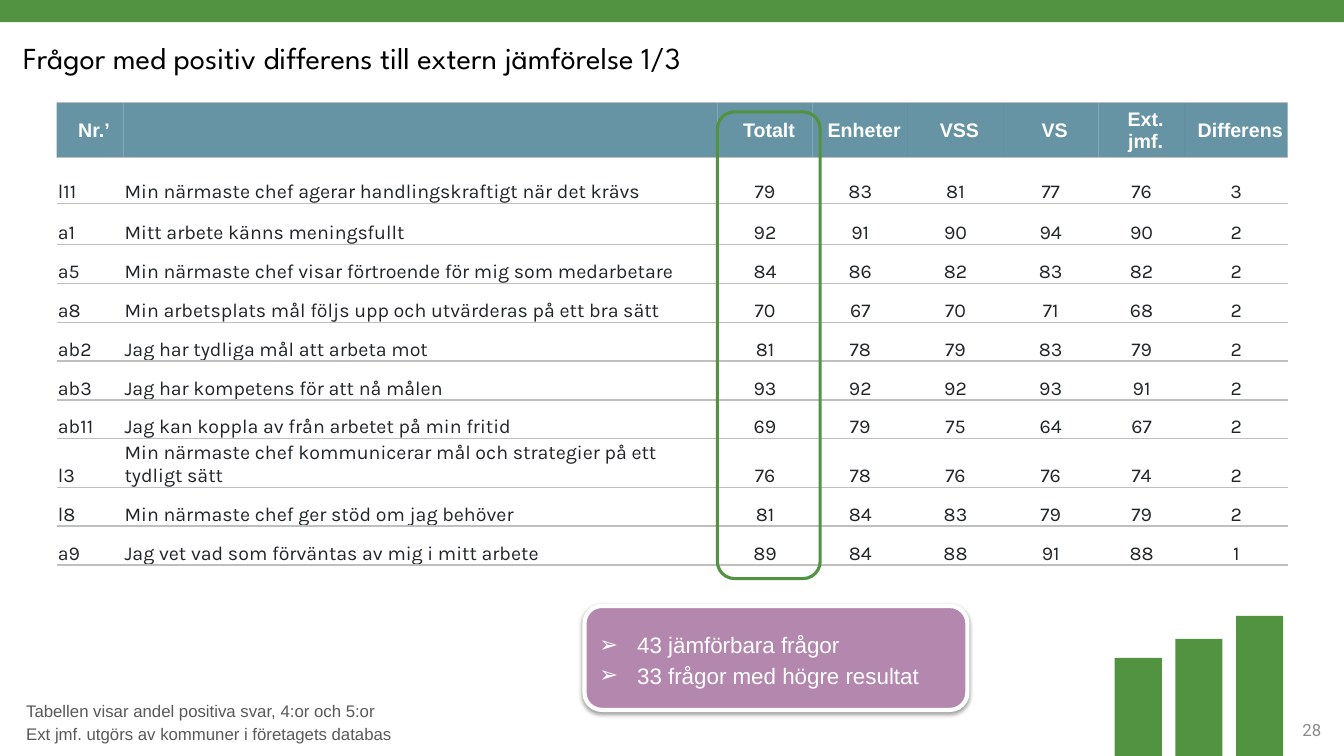
from typing import NamedTuple

from lxml import etree
from pptx import Presentation
from pptx.dml.color import RGBColor
from pptx.enum.shapes import MSO_SHAPE
from pptx.enum.text import MSO_ANCHOR, PP_ALIGN
from pptx.oxml.ns import qn
from pptx.util import Cm, Pt

RECT, ROUNDED = MSO_SHAPE.RECTANGLE, MSO_SHAPE.ROUNDED_RECTANGLE
LEFT, CENTER, RIGHT = PP_ALIGN.LEFT, PP_ALIGN.CENTER, PP_ALIGN.RIGHT
TOP, MIDDLE, BOTTOM = MSO_ANCHOR.TOP, MSO_ANCHOR.MIDDLE, MSO_ANCHOR.BOTTOM

GREEN = RGBColor(0x52, 0x93, 0x41)
TEAL = RGBColor(0x42, 0x7A, 0x8E)
PURPLE = RGBColor(0xB3, 0x87, 0xAE)
RULE = RGBColor(0xBF, 0xBF, 0xBF)
INK = RGBColor(0x21, 0x25, 0x29)
NOTE_GRAY = RGBColor(0x59, 0x59, 0x59)
PAGE_GRAY = RGBColor(0x8C, 0x8C, 0x8C)
BLACK = RGBColor(0, 0, 0)
WHITE = RGBColor(0xFF, 0xFF, 0xFF)

SLIDE_W, SLIDE_H = 33.87, 19.05


class Box(NamedTuple):
    """Left, top, width and height in centimetres."""
    x: float
    y: float
    w: float
    h: float

    def lengths(self) -> list:
        return [Cm(v) for v in self]


class Question(NamedTuple):
    number: str
    text: str
    scores: tuple  # Totalt, Enheter, VSS, VS, Ext. jmf., Differens


HEADERS = ("Nr.’", "", "Totalt", "Enheter", "VSS", "VS", "Ext. jmf.", "Differens")
QUESTIONS = [
    Question("l11", "Min närmaste chef agerar handlingskraftigt när det krävs", (79, 83, 81, 77, 76, 3)),
    Question("a1", "Mitt arbete känns meningsfullt", (92, 91, 90, 94, 90, 2)),
    Question("a5", "Min närmaste chef visar förtroende för mig som medarbetare", (84, 86, 82, 83, 82, 2)),
    Question("a8", "Min arbetsplats mål följs upp och utvärderas på ett bra sätt", (70, 67, 70, 71, 68, 2)),
    Question("ab2", "Jag har tydliga mål att arbeta mot", (81, 78, 79, 83, 79, 2)),
    Question("ab3", "Jag har kompetens för att nå målen", (93, 92, 92, 93, 91, 2)),
    Question("ab11", "Jag kan koppla av från arbetet på min fritid", (69, 79, 75, 64, 67, 2)),
    Question("l3", "Min närmaste chef kommunicerar mål och strategier på ett tydligt sätt",
             (76, 78, 76, 76, 74, 2)),
    Question("l8", "Min närmaste chef ger stöd om jag behöver", (81, 84, 83, 79, 79, 2)),
    Question("a9", "Jag vet vad som förväntas av mig i mitt arbete", (89, 84, 88, 91, 88, 1)),
]
COL_WIDTHS = [1.68, 14.97] + [2.4] * 4 + [2.18, 2.59]
ROW_HEIGHTS = [1.39, 1.16, 1.03] + [0.98] * 8


def write(tf, text: str, *, size: float, font: str, color: RGBColor, bold: bool = False,
          align=LEFT, anchor=TOP, spacing: float = 1.0, before: float = 0, bullet: str = "") -> None:
    """Fill a text frame, one paragraph per line of text."""
    tf.word_wrap = True
    tf.vertical_anchor = anchor
    for i, line in enumerate(text.split("\n")):
        p = tf.paragraphs[0] if i == 0 else tf.add_paragraph()
        p.alignment = align
        p.line_spacing = spacing
        p.space_before = Pt(before if i else 0)
        if bullet:
            pPr = p._p.get_or_add_pPr()
            pPr.set("marL", str(Cm(0.95)))
            pPr.set("indent", str(-Cm(0.95)))
            etree.SubElement(pPr, qn("a:buFont"), typeface="Arial")
            etree.SubElement(pPr, qn("a:buChar"), char=bullet)
        r = p.add_run()
        r.text = line
        f = r.font
        f.size, f.name, f.bold, f.color.rgb = Pt(size), font, bold, color


def add_box(slide, kind, box: Box, fill=None, line=None, width: float = 1):
    sp = slide.shapes.add_shape(kind, *box.lengths())
    sp.shadow.inherit = False
    if fill is None:
        sp.fill.background()
    else:
        sp.fill.solid()
        sp.fill.fore_color.rgb = fill
    if line is None:
        sp.line.fill.background()
    else:
        sp.line.color.rgb = line
        sp.line.width = Pt(width)
    return sp


def set_alpha(parent, percent: int) -> None:
    """Make the first RGB colour below an element partly transparent."""
    etree.SubElement(parent.find(".//" + qn("a:srgbClr")), qn("a:alpha"), val=str(percent * 1000))


def set_borders(cell) -> None:
    """Thin rule above and below, nothing at the sides."""
    tcPr = cell._tc.get_or_add_tcPr()
    for i, side in enumerate(("lnL", "lnR", "lnT", "lnB")):
        ln = etree.Element(qn("a:" + side), w=str(Pt(1)))
        if side in ("lnT", "lnB"):
            fill = etree.SubElement(ln, qn("a:solidFill"))
            etree.SubElement(fill, qn("a:srgbClr"), val=str(RULE))
        else:
            etree.SubElement(ln, qn("a:noFill"))
        tcPr.insert(i, ln)


def add_question_table(slide, x: float, y: float) -> None:
    box = Box(x, y, sum(COL_WIDTHS), sum(ROW_HEIGHTS))
    table = slide.shapes.add_table(len(ROW_HEIGHTS), len(COL_WIDTHS), *box.lengths()).table
    table.first_row = table.horz_banding = False
    for col, w in zip(table.columns, COL_WIDTHS):
        col.width = Cm(w)
    for row, h in zip(table.rows, ROW_HEIGHTS):
        row.height = Cm(h)

    rows = [HEADERS] + [(q.number, q.text, *q.scores) for q in QUESTIONS]
    for i, values in enumerate(rows):
        for j, value in enumerate(values):
            cell = table.cell(i, j)
            header = i == 0
            cell.margin_left = Cm(0.23 if header else 0.03)
            cell.margin_right = cell.margin_top = Cm(0.03)
            cell.margin_bottom = 0
            if header:
                cell.fill.solid()
                cell.fill.fore_color.rgb = TEAL
                set_alpha(cell._tc.tcPr, 80)
            else:
                cell.fill.background()
            set_borders(cell)
            write(cell.text_frame, str(value), size=14, font="Arial" if header else "Karla",
                  color=WHITE if header else INK, bold=header,
                  align=CENTER if header or j > 1 else LEFT)
            cell.vertical_anchor = MIDDLE if header else BOTTOM


def add_callout(slide) -> None:
    sp = add_box(slide, ROUNDED, Box(14.73, 15.27, 9.65, 2.62), PURPLE, WHITE, 3)
    shadow = etree.SubElement(sp._element.spPr.find(qn("a:effectLst")), qn("a:outerShdw"),
                              blurRad=str(Pt(3.1)), dist=str(Pt(1.6)), dir="5400000", rotWithShape="0")
    etree.SubElement(shadow, qn("a:srgbClr"), val=str(BLACK))
    set_alpha(shadow, 38)
    write(sp.text_frame, "43 jämförbara frågor\n33 frågor med högre resultat", size=16,
          font="Arial", color=WHITE, anchor=MIDDLE, spacing=1.14, bullet="➢")


def main() -> None:
    prs = Presentation()
    prs.slide_width, prs.slide_height = Cm(SLIDE_W), Cm(SLIDE_H)
    slide = prs.slides.add_slide(prs.slide_layouts[5])

    # Top band and bar motif
    add_box(slide, RECT, Box(0, 0, SLIDE_W, 0.56), GREEN)
    for i, h in enumerate((2.47, 2.95, 3.53)):
        add_box(slide, RECT, Box(28.09 + 1.53 * i, SLIDE_H - h, 1.19, h), GREEN)

    # Title
    title = slide.shapes.title
    title.left, title.top, title.width, title.height = Box(0.33, 0.74, 24.56, 1.4).lengths()
    write(title.text_frame, "Frågor med positiv differens till extern jämförelse 1/3",
          size=21.8, font="League Spartan", color=BLACK, anchor=MIDDLE)

    # Page number
    page = slide.shapes.add_textbox(*Box(31.72, 17.88, 1.83, 1.02).lengths())
    write(page.text_frame, "28", size=12, font="Roboto", color=PAGE_GRAY, align=RIGHT, anchor=MIDDLE)

    # Table, footnote, callout and frame around the Totalt column
    add_question_table(slide, 1.43, 2.58)
    note = slide.shapes.add_textbox(*Box(0.41, 17.53, 9.86, 1.4).lengths())
    write(note.text_frame, "Tabellen visar andel positiva svar, 4:or och 5:or\n"
          "Ext jmf. utgörs av kommuner i företagets databas",
          size=12, font="Arial", color=NOTE_GRAY, before=2.4)
    add_callout(slide)
    add_box(slide, ROUNDED, Box(18.08, 2.82, 2.59, 11.76), line=GREEN, width=2.25)

    prs.save("out.pptx")


if __name__ == "__main__":
    main()
